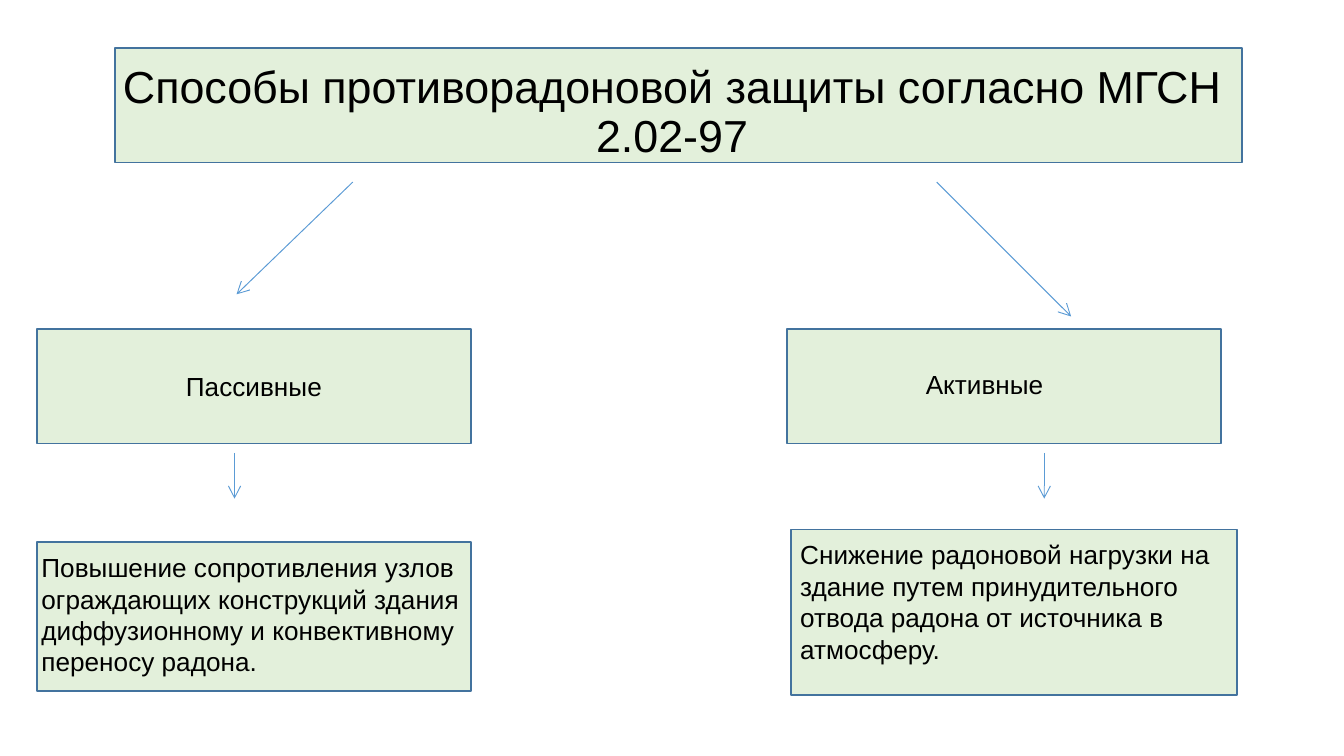
from dataclasses import dataclass
from typing import Optional

from lxml.etree import SubElement
from pptx import Presentation
from pptx.dml.color import RGBColor
from pptx.enum.shapes import MSO_CONNECTOR, MSO_SHAPE
from pptx.enum.text import MSO_ANCHOR as Anchor, PP_ALIGN as Align
from pptx.oxml.ns import qn
from pptx.util import Emu, Pt

PX = 4572  # 200 px to the inch
SLIDE_W, SLIDE_H = 2000, 1125


@dataclass(frozen=True)
class Theme:
    font: str = "Arial"
    title_size: int = 24
    body_size: int = 14
    text: str = "000000"
    fill: str = "C5E0B4"
    fill_opacity: int = 47
    border: str = "43739E"
    border_width: float = 1
    arrow: str = "5B9BD5"
    arrow_width: float = 0.5


THEME = Theme()


@dataclass(frozen=True)
class Box:
    left: int
    top: int
    width: int
    height: int


@dataclass(frozen=True)
class Label:
    text: str
    size: int = THEME.body_size
    align: Align = Align.LEFT
    anchor: Anchor = Anchor.TOP
    margins: tuple[int, int] = (20, 10)
    spacing: Optional[float] = None


@dataclass(frozen=True)
class Panel:
    box: Box
    label: Optional[Label] = None


@dataclass(frozen=True)
class TextBox:
    box: Box
    label: Label


@dataclass(frozen=True)
class Arrow:
    x1: int
    y1: int
    x2: int
    y2: int


LEFT_X, RIGHT_X = 55, 1171
BRANCH_TOP, BRANCH_W, BRANCH_H = 490, 646, 170

PANELS = [
    Panel(Box(171, 72, 1677, 170)),
    Panel(Box(LEFT_X, BRANCH_TOP, BRANCH_W, BRANCH_H),
          Label("Пассивные", align=Align.CENTER, anchor=Anchor.MIDDLE)),
    Panel(Box(RIGHT_X, BRANCH_TOP, BRANCH_W, BRANCH_H)),
    Panel(Box(LEFT_X, 806, BRANCH_W, 222)),
    Panel(Box(1177, 788, 664, 246)),
]
TEXT_BOXES = [
    TextBox(Box(138, 60, 1724, 218),
            Label("Способы противорадоновой защиты согласно МГСН 2.02-97",
                  THEME.title_size, Align.CENTER, Anchor.MIDDLE, (15, 8), 0.9)),
    TextBox(Box(1358, 538, 392, 68), Label("Активные")),
    TextBox(Box(42, 811, 682, 214),
            Label("Повышение сопротивления узлов ограждающих конструкций здания "
                  "диффузионному и конвективному переносу радона.")),
    TextBox(Box(1171, 792, 684, 208),
            Label("Снижение радоновой нагрузки на здание путем принудительного "
                  "отвода радона от источника в атмосферу.")),
]
ARROWS = [
    Arrow(525, 271, 352, 438),
    Arrow(1394, 271, 1594, 471),
    *(Arrow(x, 674, x, 742) for x in (349, 1554)),
]


def place(box: Box) -> tuple[Emu, ...]:
    """Position and size of a box in EMU."""
    return tuple(Emu(v * PX) for v in (box.left, box.top, box.width, box.height))


def write_label(tf, label: Label) -> None:
    tf.word_wrap = True
    tf.vertical_anchor = label.anchor
    side, edge = (Emu(m * PX) for m in label.margins)
    tf.margin_left = tf.margin_right = side
    tf.margin_top = tf.margin_bottom = edge
    tf.text = label.text
    p = tf.paragraphs[0]
    p.alignment = label.align
    p.line_spacing = label.spacing
    font = p.runs[0].font
    font.name = THEME.font
    font.size = Pt(label.size)
    font.color.rgb = RGBColor.from_string(THEME.text)


def add_panel(shapes, panel: Panel) -> None:
    sp = shapes.add_shape(MSO_SHAPE.RECTANGLE, *place(panel.box))
    sp.shadow.inherit = False
    sp.fill.solid()
    sp.fill.fore_color.rgb = RGBColor.from_string(THEME.fill)
    color = sp._element.spPr.find(qn("a:solidFill"))[0]
    SubElement(color, qn("a:alpha"), val=str(THEME.fill_opacity * 1000))
    sp.line.color.rgb = RGBColor.from_string(THEME.border)
    sp.line.width = Pt(THEME.border_width)
    if panel.label:
        write_label(sp.text_frame, panel.label)


def add_text_box(shapes, text_box: TextBox) -> None:
    sp = shapes.add_textbox(*place(text_box.box))
    write_label(sp.text_frame, text_box.label)


def add_arrow(shapes, arrow: Arrow) -> None:
    ends = (Emu(v * PX) for v in (arrow.x1, arrow.y1, arrow.x2, arrow.y2))
    cxn = shapes.add_connector(MSO_CONNECTOR.STRAIGHT, *ends)
    cxn.line.color.rgb = RGBColor.from_string(THEME.arrow)
    cxn.line.width = Pt(THEME.arrow_width)
    sp_pr = cxn._element.spPr
    SubElement(sp_pr.find(qn("a:ln")), qn("a:tailEnd"), type="arrow")
    SubElement(sp_pr, qn("a:effectLst"))


def main() -> None:
    prs = Presentation()
    prs.slide_width, prs.slide_height = Emu(SLIDE_W * PX), Emu(SLIDE_H * PX)
    shapes = prs.slides.add_slide(prs.slide_layouts[6]).shapes
    for panel in PANELS:
        add_panel(shapes, panel)
    for text_box in TEXT_BOXES:
        add_text_box(shapes, text_box)
    for arrow in ARROWS:
        add_arrow(shapes, arrow)
    prs.save("out.pptx")


if __name__ == "__main__":
    main()
